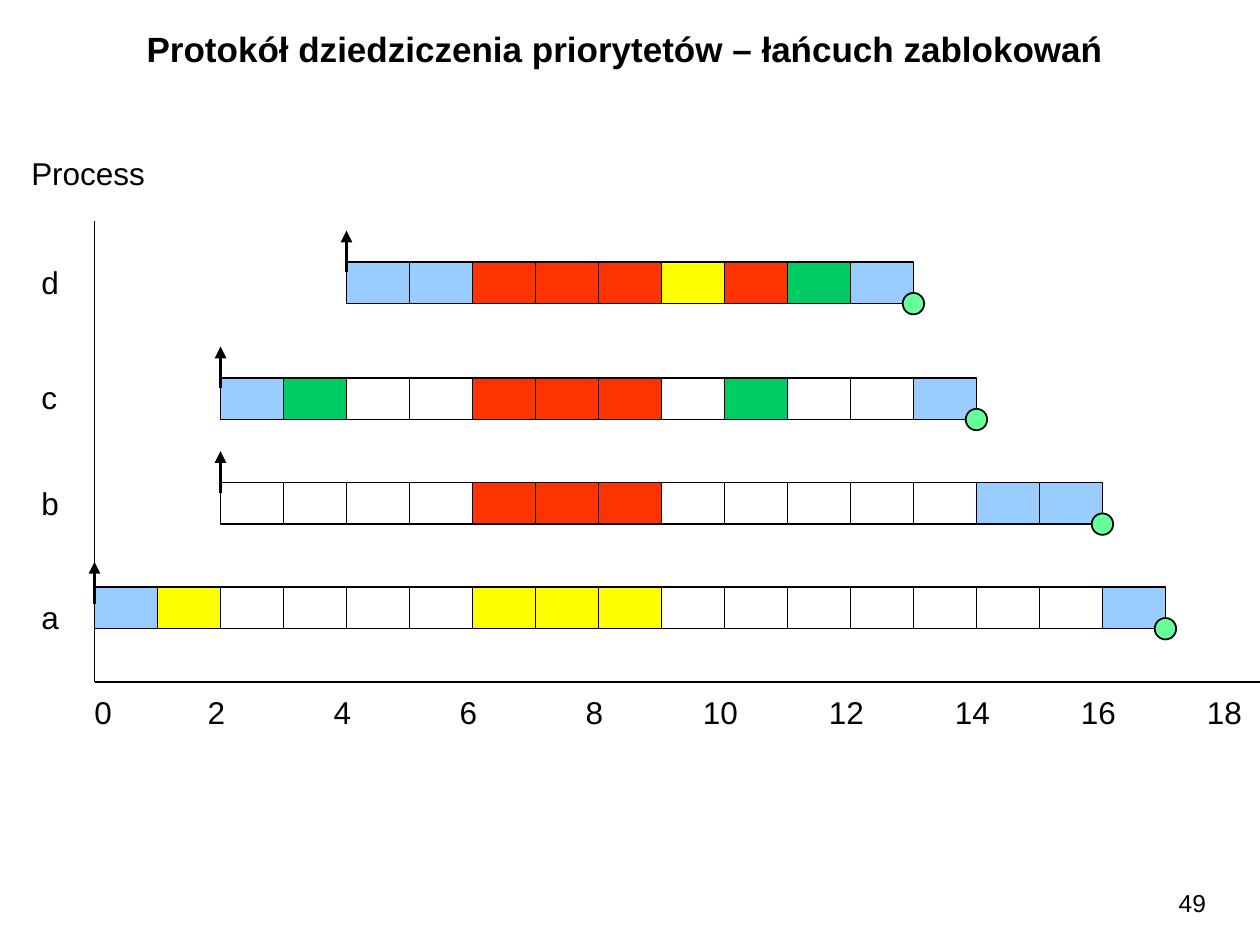
from dataclasses import dataclass

from lxml.etree import SubElement
from pptx import Presentation
from pptx.dml.color import RGBColor
from pptx.enum.shapes import MSO_CONNECTOR as Connector, MSO_SHAPE as Shape
from pptx.enum.text import MSO_AUTO_SIZE as AutoSize, PP_ALIGN as Align
from pptx.oxml.ns import qn
from pptx.util import Inches, Pt


@dataclass(frozen=True)
class Theme:
    font: str = "Arial"
    ink: str = "000000"
    finish: str = "66FF99"
    title_size: int = 20
    label_size: int = 18
    number_size: int = 14
    thin: float = 1
    thick: float = 2.25


THEME = Theme()
TITLE = "Protokół dziedziczenia priorytetów – łańcuch zablokowań"
AXIS_TITLE = "Process"
PAGE_NUMBER = "49"
STATE_COLORS = {"E": "99CCFF", "Q": "FF3300", "V": "FFFF00", "G": "00CC66", ".": None}
PROCESSES = [
    {"name": "d", "start": 4, "states": "EEQQQVQGE", "top": 2.08, "label_top": 2.04, "arrow_top": 1.83},
    {"name": "c", "start": 2, "states": "EG..QQQ.G..E", "top": 3, "label_top": 2.95, "arrow_top": 2.75},
    {"name": "b", "start": 2, "states": "....QQQ.....EE", "top": 3.83, "label_top": 3.79, "arrow_top": 3.58},
    {"name": "a", "start": 0, "states": "EV....VVV.......E", "top": 4.66, "label_top": 4.7, "arrow_top": 4.46},
]
TICKS = range(0, 19, 2)

SLIDE_WIDTH, SLIDE_HEIGHT = 10, 7.5
ORIGIN, AXIS_TOP, AXIS_BOTTOM = 0.75, 1.75, 5.41
STEP, BAR_HEIGHT, ARROW_LENGTH, DOT = 0.5, 0.33, 0.33, 0.17
LABEL_HEIGHT, TICK_TOP = 0.4, 5.45
TICK_WIDTHS = {1: 0.34, 2: 0.48}


def time_x(time):
    """Return the horizontal position of a moment on the time axis."""
    return ORIGIN + time * STEP


def add_text(slide, text, left, top, width, height, size, align=Align.LEFT, bold=False, wrap=False, grow=True):
    """Add a one-paragraph text box."""
    text_frame = slide.shapes.add_textbox(*map(Inches, (left, top, width, height))).text_frame
    text_frame.text = text
    text_frame.word_wrap = wrap
    text_frame.auto_size = AutoSize.SHAPE_TO_FIT_TEXT if grow else AutoSize.NONE
    paragraph = text_frame.paragraphs[0]
    paragraph.alignment = align
    font = paragraph.runs[0].font
    font.name, font.size, font.bold = THEME.font, Pt(size), bold
    font.color.rgb = RGBColor.from_string(THEME.ink)


def add_label(slide, text, left, top, width):
    """Add a label of the diagram."""
    add_text(slide, text, left, top, width, LABEL_HEIGHT, THEME.label_size)


def add_line(slide, start, end, width, arrow=False):
    """Add a straight line, with an optional arrowhead at its start."""
    line = slide.shapes.add_connector(Connector.STRAIGHT, *map(Inches, (*start, *end)))
    line.line.width = Pt(width)
    line.line.color.rgb = RGBColor.from_string(THEME.ink)
    if arrow:
        SubElement(line.line._get_or_add_ln(), qn("a:headEnd"), type="triangle")
    SubElement(line._element.spPr, qn("a:effectLst"))


def add_outlined(slide, kind, left, top, width, height, color):
    """Add an outlined shape, left unfilled when it has no colour."""
    shape = slide.shapes.add_shape(kind, *map(Inches, (left, top, width, height)))
    shape.shadow.inherit = False
    shape.line.width = Pt(THEME.thin)
    shape.line.color.rgb = RGBColor.from_string(THEME.ink)
    if color:
        shape.fill.solid()
        shape.fill.fore_color.rgb = RGBColor.from_string(color)
    else:
        shape.fill.background()


def add_process(slide, process):
    """Add the label, time cells, release arrow and finish dot of a process."""
    start, states, top = process["start"], process["states"], process["top"]
    add_label(slide, process["name"], 0.23, process["label_top"], TICK_WIDTHS[1])
    for time, state in enumerate(states, start):
        add_outlined(slide, Shape.RECTANGLE, time_x(time), top, STEP, BAR_HEIGHT, STATE_COLORS[state])
    left, arrow_top = time_x(start), process["arrow_top"]
    add_line(slide, (left, arrow_top), (left, arrow_top + ARROW_LENGTH), THEME.thick, arrow=True)
    finish = time_x(start + len(states))
    add_outlined(slide, Shape.OVAL, finish - DOT / 2, top + BAR_HEIGHT - DOT / 2, DOT, DOT, THEME.finish)


def add_axes(slide):
    """Add both axes with the tick labels of the time axis."""
    corner = (ORIGIN, AXIS_BOTTOM)
    add_line(slide, (ORIGIN, AXIS_TOP), corner, THEME.thin)
    add_line(slide, corner, (SLIDE_WIDTH, AXIS_BOTTOM), THEME.thin)
    add_label(slide, AXIS_TITLE, 0.15, 1.17, 1.1)
    for tick in TICKS:
        width = TICK_WIDTHS[len(str(tick))]
        center = time_x(tick) + (-0.03 if tick else 0.07)
        add_label(slide, str(tick), center - width / 2, TICK_TOP, width)


def main():
    """Build the slide and save it."""
    presentation = Presentation()
    presentation.slide_width, presentation.slide_height = Inches(SLIDE_WIDTH), Inches(SLIDE_HEIGHT)
    slide = presentation.slides.add_slide(presentation.slide_layouts[6])
    add_text(slide, PAGE_NUMBER, 8.75, 7, 0.92, 0.33, THEME.number_size, Align.RIGHT, wrap=True, grow=False)
    add_text(slide, TITLE, 0.25, 0.17, 9.42, 0.43, THEME.title_size, Align.CENTER, bold=True, wrap=True)
    add_axes(slide)
    for process in PROCESSES:
        add_process(slide, process)
    presentation.save("out.pptx")


if __name__ == "__main__":
    main()
